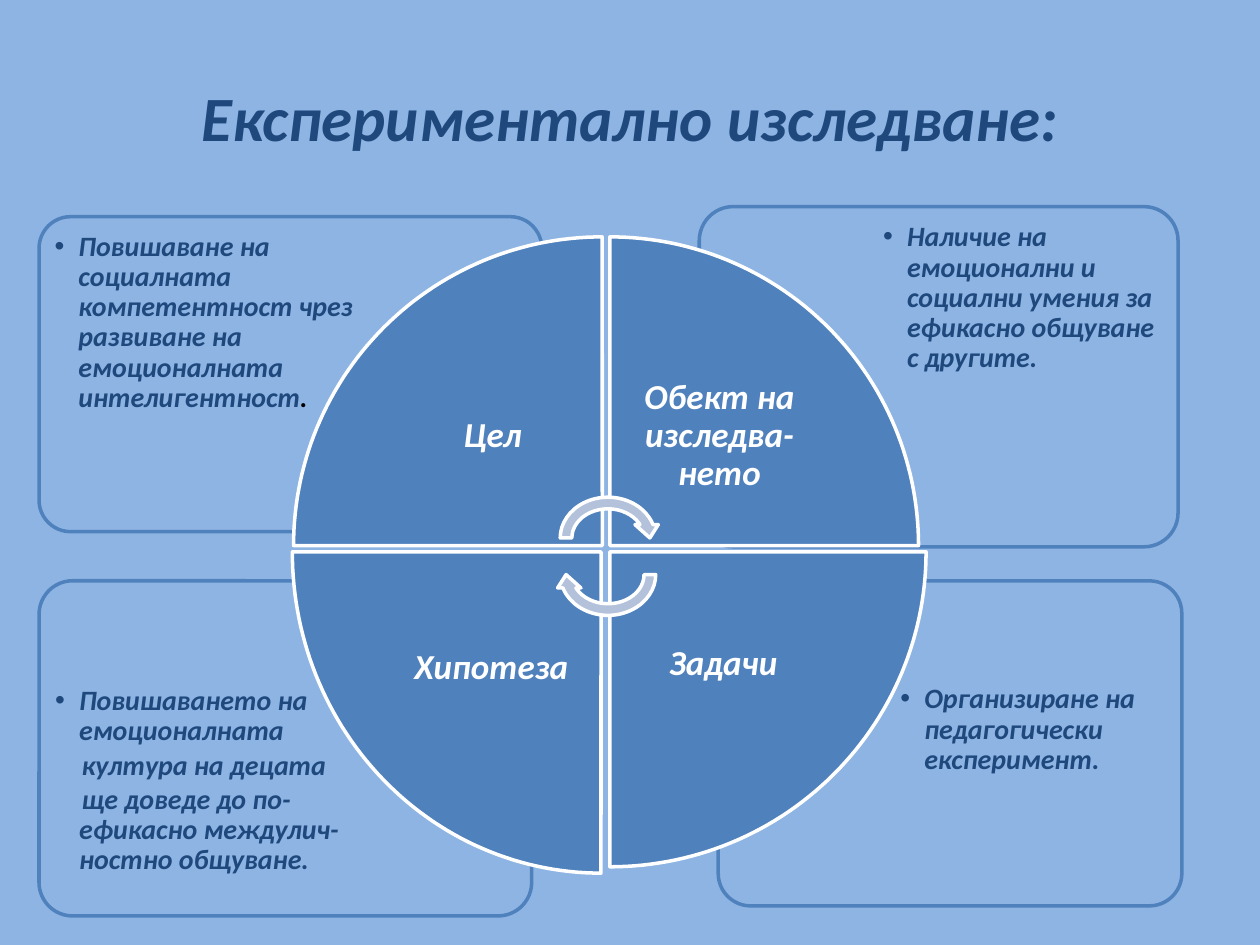
import math

from lxml import etree
from pptx import Presentation
from pptx import util as u
from pptx.dml.color import RGBColor
from pptx.enum import shapes, text
from pptx.oxml.ns import qn

BACK, BLUE, NAVY, WHITE, ARROW = "8EB4E3", "4F81BD", "1F497D", "FFFFFF", "B3C1DB"
FONT = "Calibri"
TITLE = "Експериментално изследване:"

# Box (left, top, width, height), insets (left, top, right, bottom), paragraphs of (text, colour) spans
NOTES = [
    ((5.7, 4.61, 3.68, 2.58), (1.37, 0.75, 0.05, 0.05),
     [[("Организиране на педагогически експеримент.", NAVY)]]),
    ((0.31, 4.61, 3.91, 2.66), (0.05, 0.76, 1.4, 0.05),
     [[("Повишаването на емоционалната", NAVY)],
      [("култура на децата", NAVY)],
      [("ще доведе до по- ефикасно междулич- ностно общуване.", NAVY)]]),
    ((5.55, 1.64, 3.8, 2.7), (1.38, 0.05, 0.05, 0.72),
     [[("Наличие на емоционални и социални умения за ефикасно общуване с другите.", NAVY)]]),
    ((0.31, 1.72, 3.99, 2.5), (0.05, 0.05, 1.4, 0.7),
     [[("Повишаване на социалната компетентност чрез развиване на "
        "емоционалната интелигентност", NAVY), (".", "000000")]]),
]

# Label, inner corner, radii, direction of the quarter from its corner
QUARTERS = [
    ("Цел", (4.78, 4.33), (2.45, 2.45), (-1, -1)),
    ("Обект на изследва-нето", (4.84, 4.33), (2.45, 2.45), (1, -1)),
    ("Задачи", (4.84, 4.38), (2.51, 2.5), (1, 1)),
    ("Хипотеза", (4.77, 4.38), (2.45, 2.55), (-1, 1)),
]
ARROWS = [(3.9, 0), (4.19, 180)]  # top, rotation


def colour(value):
    return RGBColor.from_string(value)


def paint(shape, fill, line):
    shape.shadow.inherit = False
    shape.fill.solid()
    shape.fill.fore_color.rgb = colour(fill)
    shape.line.color.rgb = colour(line)
    shape.line.width = u.Pt(2)


def set_frame(shape, insets, anchor):
    frame = shape.text_frame
    frame.word_wrap = True
    frame.vertical_anchor = anchor
    (frame.margin_left, frame.margin_top,
     frame.margin_right, frame.margin_bottom) = map(u.Inches, insets)
    return frame


def write(para, spans, size, align, after=0, spacing=0.9):
    para.alignment = align
    para.line_spacing = spacing
    para.space_after = u.Pt(after)
    for words, ink in spans:
        span = para.add_run()
        span.text = words
        font = span.font
        font.name, font.size = FONT, u.Pt(size)
        font.bold = font.italic = True
        font.color.rgb = colour(ink)


def indent(para, bulleted):
    """Hang the bullet left of the text, or nudge the first line of a plain paragraph."""
    props = para._p.get_or_add_pPr()
    props.set("marL", str(u.Inches(0.19)))
    props.set("indent", str(u.Inches(-0.19 if bulleted else 0.02)))
    if bulleted:
        etree.SubElement(props, qn("a:buFont")).set("typeface", "Arial")
        etree.SubElement(props, qn("a:buChar")).set("char", "•")
    else:
        etree.SubElement(props, qn("a:buNone"))


def add_note(page, place, insets, paragraphs):
    box = page.shapes.add_shape(shapes.MSO_SHAPE.ROUNDED_RECTANGLE, *map(u.Inches, place))
    box.adjustments[0] = 0.1
    paint(box, BACK, BLUE)
    frame = set_frame(box, insets, text.MSO_ANCHOR.TOP)
    for number, spans in enumerate(paragraphs):
        para = frame.add_paragraph() if number else frame.paragraphs[0]
        write(para, spans, 16, text.PP_ALIGN.LEFT, after=2.4)
        indent(para, bulleted=number == 0)


def add_quarter(page, label, corner, radii, direction, steps=60):
    (x, y), (rx, ry), (dx, dy) = corner, radii, direction
    angles = [math.pi / 2 * step / steps for step in range(steps + 1)]
    arc = [(u.Inches(x + dx * rx * math.cos(a)), u.Inches(y + dy * ry * math.sin(a)))
           for a in angles]
    builder = page.shapes.build_freeform(u.Inches(x), u.Inches(y))
    builder.add_line_segments(arc, close=True)
    quarter = builder.convert_to_shape()
    paint(quarter, BLUE, WHITE)
    inner, outer = 0.16, 0.87
    insets = (outer if dx < 0 else inner, outer if dy < 0 else inner,
              inner if dx < 0 else outer, inner if dy < 0 else outer)
    frame = set_frame(quarter, insets, text.MSO_ANCHOR.MIDDLE)
    write(frame.paragraphs[0], [(label, WHITE)], 20, text.PP_ALIGN.CENTER)


def main():
    deck = Presentation()
    deck.slide_width, deck.slide_height = u.Inches(10), u.Inches(7.5)
    page = deck.slides.add_slide(deck.slide_layouts[6])
    page.background.fill.solid()
    page.background.fill.fore_color.rgb = colour(BACK)

    title = page.shapes.add_textbox(*map(u.Inches, (0.5, 0.3, 9, 1.25)))
    frame = set_frame(title, (0.1, 0.05, 0.1, 0.05), text.MSO_ANCHOR.MIDDLE)
    write(frame.paragraphs[0], [(TITLE, NAVY)], 36, text.PP_ALIGN.CENTER, spacing=1.0)

    for note in NOTES:
        add_note(page, *note)
    for quarter in QUARTERS:
        add_quarter(page, *quarter)
    for top, rotation in ARROWS:
        arrow = page.shapes.add_shape(shapes.MSO_SHAPE.CIRCULAR_ARROW,
                                      *map(u.Inches, (4.4, top, 0.85, 0.74)))
        arrow.rotation = rotation
        paint(arrow, ARROW, WHITE)

    deck.save("out.pptx")


if __name__ == "__main__":
    main()
